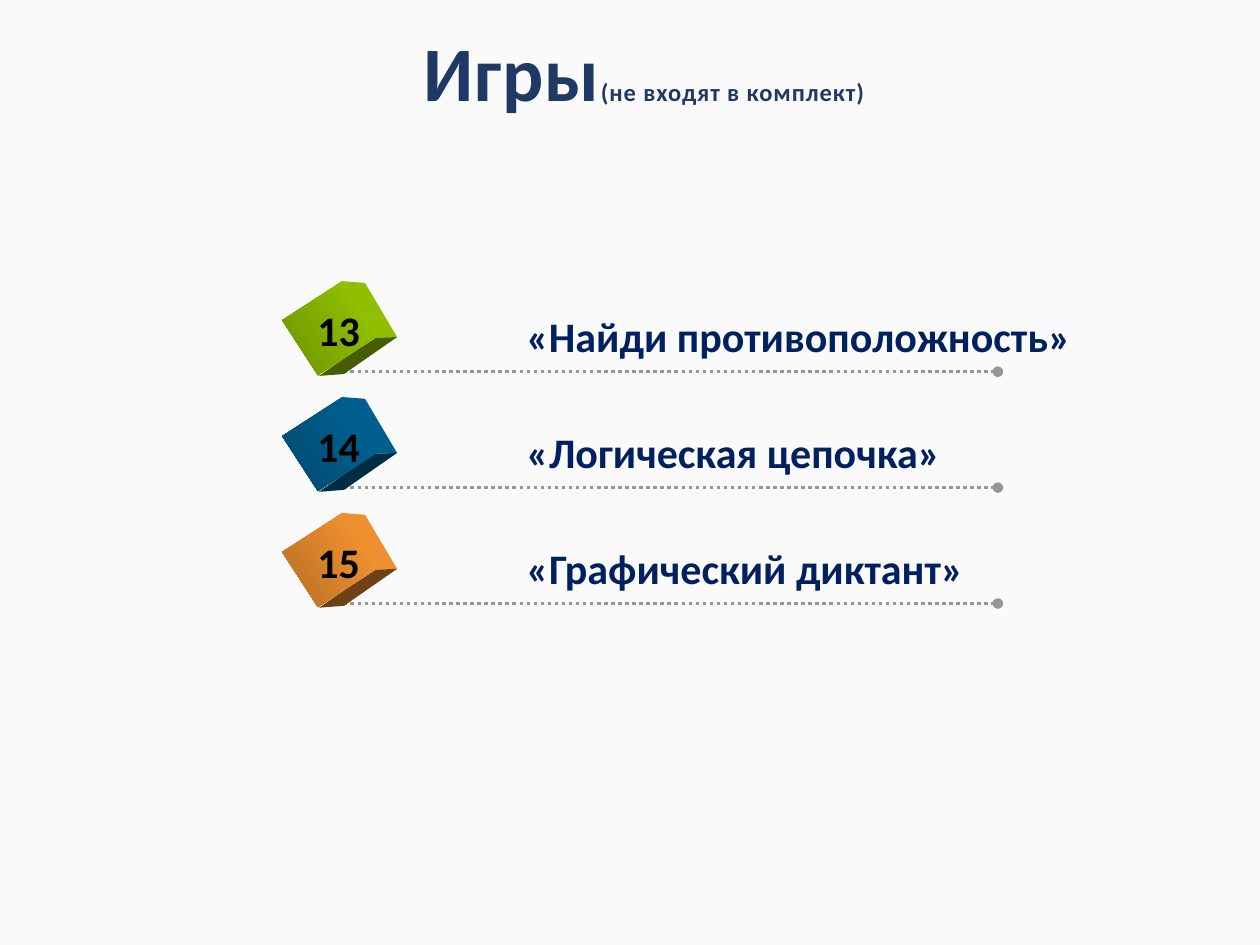
from pptx import Presentation
from pptx.util import Pt
from pptx.dml.color import RGBColor as RGB
from pptx.enum.dml import MSO_LINE as Dash
from pptx.enum.shapes import MSO_SHAPE as Shape, MSO_CONNECTOR as Link
from pptx.enum.text import PP_ALIGN as Align, MSO_ANCHOR as Anchor, MSO_AUTO_SIZE as Auto
from pptx.oxml import parse_xml
from pptx.oxml.ns import nsdecls

HUES = {"back": "FAFAFA", "title": "203864", "label": "002060",
        "num": "000000", "rule": "969696", "edge": "FFFFFF"}
TITLE = [("Игры", 44), ("(не входят в комплект)", 14)]
GAMES = [
    ("13", "«Найди противоположность»", 333.36,
     {"light": "99CC00", "dark": "6D9200", "side": "8FBF00", "base": "455C00"}),
    ("14", "«Логическая цепочка»", 253.44,
     {"light": "006699", "dark": "00496D", "side": "005F8F", "base": "002D44"}),
    ("15", "«Графический диктант»", 267.12,
     {"light": "FF9933", "dark": "B66D24", "side": "EE8F30", "base": "6E4217"}),
]
FACES = {
    "side": [(194.9, -51.8), (208.6, -50.7), (226.9, -19.8), (213.7, -19.3)],
    "base": [(213.7, -19.3), (226.9, -19.8), (196.6, 1.3), (182.3, 2.4)],
}
TOP, STEP = 212.4, 66.24


def write(para, text, size, hue, space=0, edge=None):
    """Add a bold run of text to a paragraph."""
    run = para.add_run()
    run.text = text
    font = run.font
    font.name, font.size, font.bold = "Calibri", Pt(size), True
    font.color.rgb = RGB.from_string(hue)
    props = font._element
    if space:
        props.set("spc", str(int(space * 100)))
    if edge:
        props.insert(0, parse_xml(
            f'<a:ln {nsdecls("a")} w="9525"><a:solidFill>'
            f'<a:srgbClr val="{edge}"/></a:solidFill></a:ln>'))


def add_text(shapes, text, left, top, width, **form):
    """Add a one-line text box."""
    box = shapes.add_textbox(Pt(left), Pt(top), Pt(width), Pt(36.72))
    frame = box.text_frame
    frame.word_wrap, frame.auto_size = False, Auto.SHAPE_TO_FIT_TEXT
    write(frame.paragraphs[0], text, 24, **form)


def add_rule(shapes, y):
    """Add a dotted rule that ends in a dot."""
    rule = shapes.add_connector(Link.STRAIGHT, Pt(192.24), Pt(y), Pt(570.24), Pt(y))
    line = rule.line
    line.width, line.dash_style = Pt(2), Dash.ROUND_DOT
    line.color.rgb = RGB.from_string(HUES["rule"])
    line._get_or_add_ln().append(parse_xml(f'<a:tailEnd {nsdecls("a")} type="oval"/>'))
    rule._element.spPr.append(parse_xml(f'<a:effectLst {nsdecls("a")}/>'))


def add_cube(shapes, y, tones):
    """Add a tilted cube from two side faces and a shaded front."""
    for name, spots in FACES.items():
        dots = [(Pt(x), Pt(y + dy)) for x, dy in spots]
        pen = shapes.build_freeform(*dots[0])
        pen.add_line_segments(dots[1:], close=True)
        face = pen.convert_to_shape()
        face.shadow.inherit = False
        face.fill.solid()
        face.fill.fore_color.rgb = RGB.from_string(tones[name])
        face.line.fill.background()
    front = shapes.add_shape(Shape.RECTANGLE, Pt(169.92), Pt(y - 45.36), Pt(37.44), Pt(41.04))
    front.rotation = 57
    front.shadow.inherit = False
    front.line.fill.background()
    front.fill.gradient()
    front.fill.gradient_angle = 270
    for stop, tone, spot in zip(front.fill.gradient_stops, ("light", "dark"), (0, 1)):
        stop.color.rgb = RGB.from_string(tones[tone])
        stop.position = spot


def main():
    """Build the slide of games."""
    deck = Presentation()
    deck.slide_width, deck.slide_height = Pt(720), Pt(540)
    slide = deck.slides.add_slide(deck.slide_layouts[5])
    slide.background.fill.solid()
    slide.background.fill.fore_color.rgb = RGB.from_string(HUES["back"])

    title = slide.shapes.title
    title.left, title.top, title.width, title.height = Pt(175), Pt(12.24), Pt(386), Pt(62.64)
    frame = title.text_frame
    frame.vertical_anchor, frame.auto_size = Anchor.MIDDLE, Auto.NONE
    para = frame.paragraphs[0]
    para.alignment, para.line_spacing = Align.CENTER, 0.9
    for text, size in TITLE:
        write(para, text, size, HUES["title"], space=0.5)

    for row, (num, name, width, tones) in enumerate(GAMES):
        y = TOP + row * STEP
        shapes = slide.shapes.add_group_shape().shapes
        add_rule(shapes, y)
        add_cube(shapes, y, tones)
        add_text(shapes, name, 293.76, y - 38.4, width, hue=HUES["label"], edge=HUES["edge"])
        add_text(shapes, num, 174.24, y - 42, 38.88, hue=HUES["num"])

    deck.save("out.pptx")


if __name__ == "__main__":
    main()
